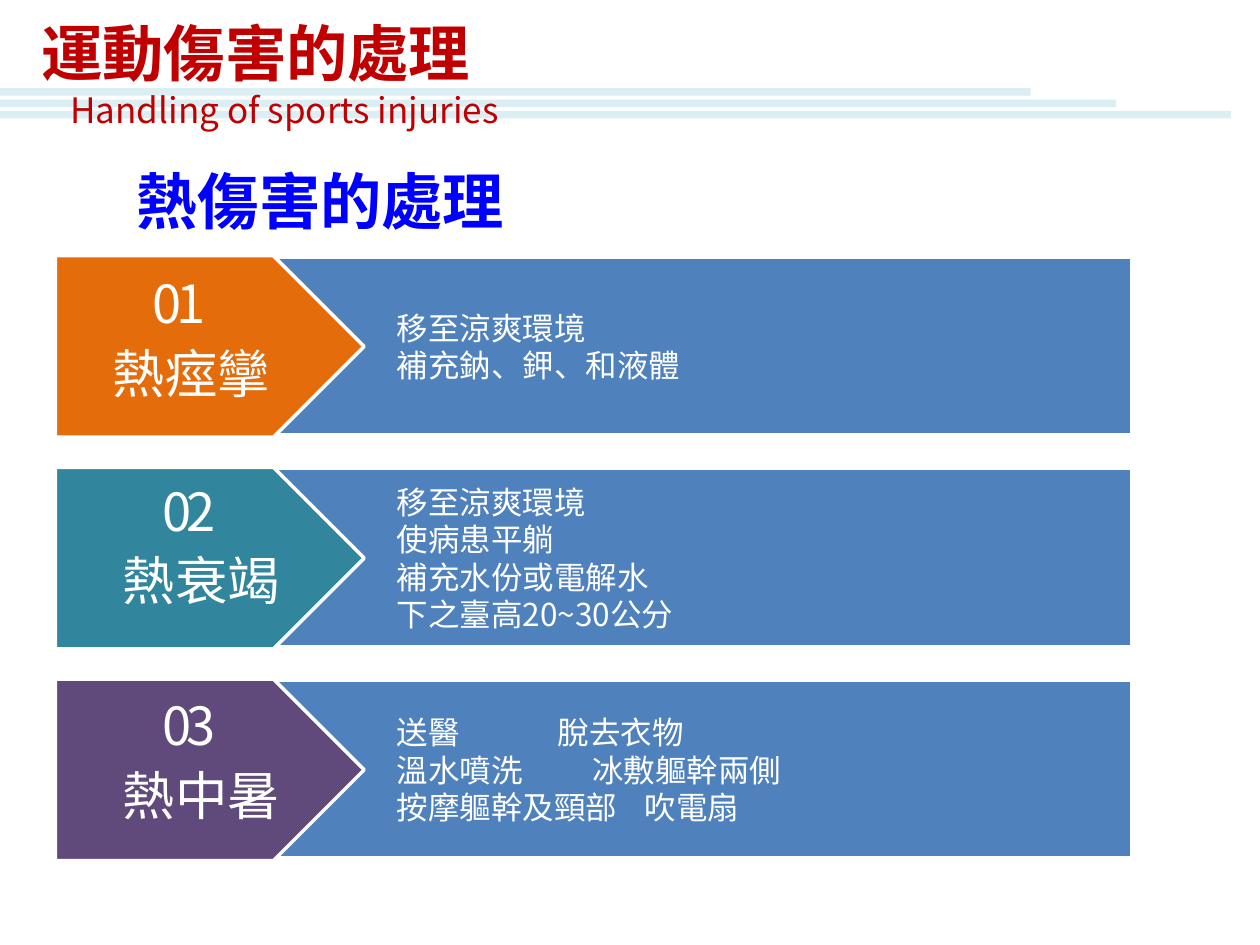
from lxml import etree
from pptx import Presentation
from pptx.dml.color import RGBColor
from pptx.enum.shapes import MSO_SHAPE
from pptx.enum.text import MSO_ANCHOR, PP_ALIGN
from pptx.oxml.ns import qn
from pptx.util import Inches, Pt

RECT, PENTAGON = MSO_SHAPE.RECTANGLE, MSO_SHAPE.PENTAGON
TOP, MIDDLE = MSO_ANCHOR.TOP, MSO_ANCHOR.MIDDLE
LEFT, CENTER, JUSTIFY = PP_ALIGN.LEFT, PP_ALIGN.CENTER, PP_ALIGN.JUSTIFY

FONT = "Noto Sans CJK SC"
LINE_HEIGHT = 1.19
COLORS = {
    "stripe": "DBEEF4", "title": "C00000", "subtitle": "0000FF", "panel": "4F81BD",
    "orange": "E46C0A", "teal": "31859C", "purple": "604A7B", "white": "FFFFFF",
}

ROW_TOP, ROW_STEP, ROW_HEIGHT = 2.03, 1.68, 1.44
# colour, number, name, label left, label offset from row top, text width, lines, tab stops
ROWS = [
    ("orange", "01", "熱痙攣", 0.62, 0.17, 2.58,
     ["移至涼爽環境", "補充鈉、鉀、和液體"], []),
    ("teal", "02", "熱衰竭", 0.7, 0.14, 2.73,
     ["移至涼爽環境", "使病患平躺", "補充水份或電解水", "下之臺高20~30公分"], []),
    ("purple", "03", "熱中暑", 0.7, 0.16, 4.22,
     ["送醫\t脫去衣物", "溫水噴洗\t冰敷軀幹兩側", "按摩軀幹及頸部\t吹電扇"],
     [1.28, 1.55, 1.97]),
]


class SlideBuilder:
    def __init__(self, prs):
        self.s = prs.slides.add_slide(prs.slide_layouts[6])

    def shape(self, kind, x, y, w, h, fill, outlined=False):
        sp = self.s.shapes.add_shape(kind, Inches(x), Inches(y), Inches(w), Inches(h))
        sp.shadow.inherit = False
        sp.fill.solid()
        sp.fill.fore_color.rgb = RGBColor.from_string(COLORS[fill])
        if outlined:
            sp.line.color.rgb = RGBColor.from_string(COLORS["white"])
            sp.line.width = Pt(2)
        else:
            sp.line.fill.background()
        return sp

    def text(self, x, y, w, h, anchor=TOP):
        sp = self.s.shapes.add_textbox(Inches(x), Inches(y), Inches(w), Inches(h))
        tf = sp.text_frame
        tf.word_wrap = True
        tf.vertical_anchor = anchor
        return tf

    def paragraph(self, tf, text, size, color, align=LEFT, bold=False, spacing=None):
        """Fill the first paragraph if it is empty, otherwise append one."""
        p = tf.paragraphs[0] if not tf.text else tf.add_paragraph()
        p.text = text
        p.alignment = align
        p.line_spacing = spacing or Pt(round(size * LINE_HEIGHT, 1))
        p.font.name, p.font.size, p.font.bold = FONT, Pt(size), bold
        p.font.color.rgb = RGBColor.from_string(COLORS[color])
        for r in p.runs:
            etree.SubElement(r.font._element, qn("a:ea"), typeface=FONT)
        return p

    def tab_stop(self, p, position):
        pPr = p._p.get_or_add_pPr()
        tabs = etree.Element(qn("a:tabLst"))
        etree.SubElement(tabs, qn("a:tab"), pos=str(Inches(position)), algn="l")
        pPr.find(qn("a:defRPr")).addprevious(tabs)

    def label(self, x, y, w, h, text):
        tf = self.text(x, y, w, h, MIDDLE)
        return self.paragraph(tf, text, 30, "white", CENTER, spacing=0.9)

    def row(self, top, color, number, name, label_x, label_dy, text_w, lines, tabs):
        self.shape(RECT, 0.62, top + 0.01, 8.36, 1.41, "panel", True)
        self.shape(PENTAGON, 0.44, top, 2.45, ROW_HEIGHT, color, True)
        p = self.label(label_x + 0.4, top + label_dy, 0.8, 0.46, number)
        p.runs[0].font._element.set("spc", "-300")
        self.label(label_x, top + label_dy + 0.47, 1.8, 0.63, name)

        text_h = 0.3 * len(lines) + 0.11
        tf = self.text(3.05, top + (ROW_HEIGHT - text_h) / 2, text_w, text_h, MIDDLE)
        paragraphs = [self.paragraph(tf, line, 18, "white") for line in lines]
        for p, position in zip(paragraphs, tabs):
            self.tab_stop(p, position)


def main():
    prs = Presentation()
    prs.slide_width, prs.slide_height = Inches(10), Inches(7.5)
    slide = SlideBuilder(prs)

    for i, width in enumerate([8.18, 8.86, 9.77]):
        slide.shape(RECT, 0, 0.7 + 0.09 * i, width, 0.06, "stripe")

    tf = slide.text(0.23, 0.08, 4.06, 1.03)
    slide.paragraph(tf, "運動傷害的處理", 35, "title", JUSTIFY, bold=True)
    slide.paragraph(tf, "Handling of sports injuries", 20, "title", CENTER)
    tf = slide.text(0.16, 1.25, 4.77, 0.69)
    slide.paragraph(tf, "熱傷害的處理", 35, "subtitle", CENTER, bold=True)

    for i, row in enumerate(ROWS):
        slide.row(ROW_TOP + ROW_STEP * i, *row)

    prs.save("out.pptx")


if __name__ == "__main__":
    main()
